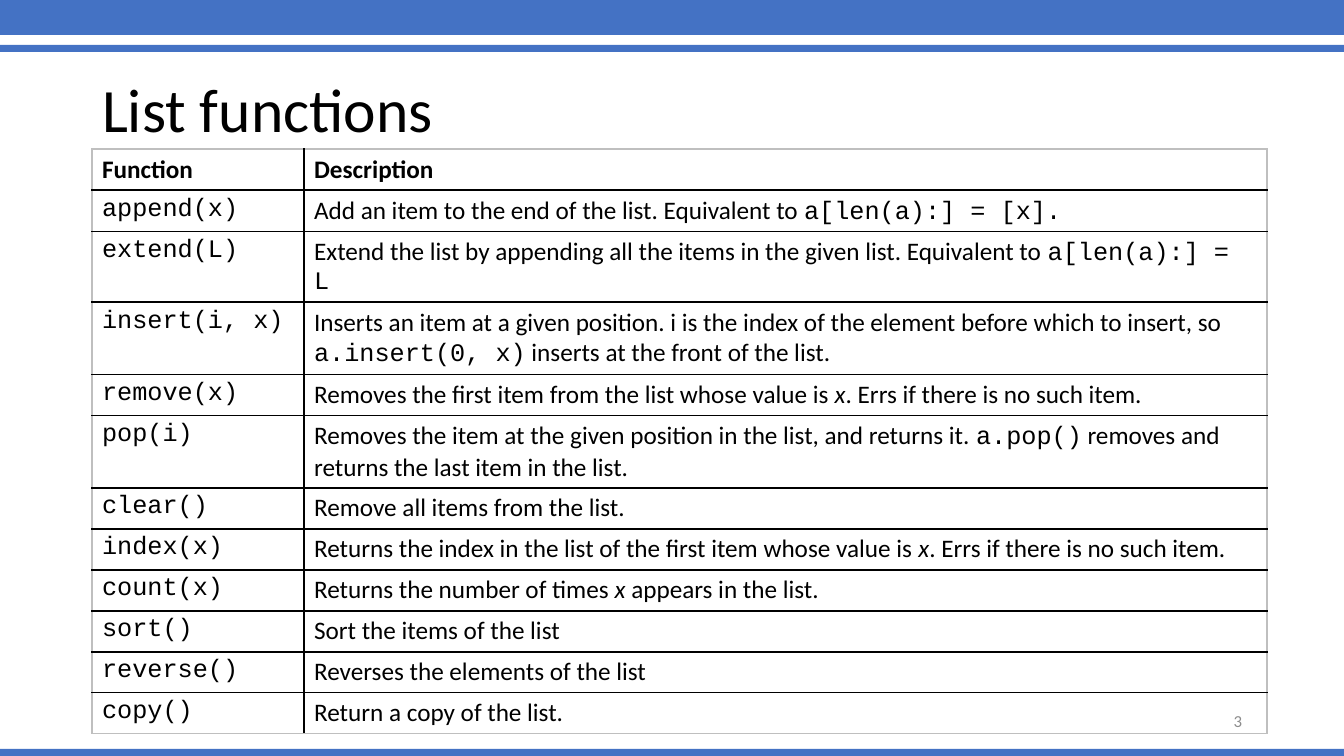
from lxml.etree import SubElement
from pptx import Presentation
from pptx.dml.color import RGBColor
from pptx.enum.shapes import MSO_SHAPE
from pptx.enum.text import MSO_ANCHOR, MSO_AUTO_SIZE, PP_ALIGN
from pptx.oxml.ns import qn
from pptx.util import Emu, Pt

EMU_PER_PX = 914400 / 100.8
SLIDE_WIDTH, SLIDE_HEIGHT = 1344, 756
COLORS = {"bar": "4472C4", "text": "000000", "grid": "000000",
          "frame": "BFBFBF", "number": "8C8C8C"}
BARS = [(-3, 38), (45, 7), (749, 7)]  # top, height
COLUMN_WIDTHS = (212, 963)
ROW_HEIGHT = 41

BODY = {"name": "Calibri", "size": Pt(18), "bold": False}
HEADER = {**BODY, "bold": True}
CODE = {**BODY, "name": "Courier New"}
ITALIC = {**BODY, "italic": True}
TITLE = {**BODY, "size": Pt(44)}
NUMBER = {**BODY, "size": Pt(12)}

FUNCTIONS = [
    ("append(x)", [("Add an item to the end of the list. Equivalent to ", BODY),
                   ("a[len(a):] = [x].", CODE)]),
    ("extend(L)", [("Extend the list by appending all the items in the given list. "
                    "Equivalent to ", BODY),
                   ("a[len(a):] = L", CODE)]),
    ("insert(i, x)", [("Inserts an item at a given position. i is the index of the "
                       "element before which to insert, so ", BODY),
                      ("a.insert(0, x)", CODE),
                      (" inserts at the front of the list.", BODY)]),
    ("remove(x)", [("Removes the first item from the list whose value is ", BODY),
                   ("x", ITALIC), (". Errs if there is no such item.", BODY)]),
    ("pop(i)", [("Removes the item at the given position in the list, "
                 "and returns it. ", BODY),
                ("a.pop()", CODE),
                (" removes and returns the last item in the list.", BODY)]),
    ("clear()", [("Remove all items from the list. ", BODY)]),
    ("index(x)", [("Returns the index in the list of the first item whose value is ",
                   BODY),
                  ("x", ITALIC), (". Errs if there is no such item.", BODY)]),
    ("count(x)", [("Returns the number of times ", BODY),
                  ("x", ITALIC), (" appears in the list.", BODY)]),
    ("sort()", [("Sort the items of the list", BODY)]),
    ("reverse()", [("Reverses the elements of the list", BODY)]),
    ("copy()", [("Return a copy of the list.", BODY)]),
]


def px(length):
    return Emu(round(length * EMU_PER_PX))


def rgb(color):
    return RGBColor.from_string(COLORS[color])


def add_run(paragraph, text, font_format, color="text"):
    run = paragraph.add_run()
    run.text = text
    for attribute, value in font_format.items():
        setattr(run.font, attribute, value)
    run.font.color.rgb = rgb(color)


def add_bar(slide, top, height):
    bar = slide.shapes.add_shape(MSO_SHAPE.RECTANGLE, px(0), px(top),
                                 px(SLIDE_WIDTH), px(height))
    bar.shadow.inherit = False
    bar.fill.solid()
    bar.fill.fore_color.rgb = rgb("bar")
    bar.line.fill.background()


def set_title(slide, text):
    title = slide.shapes.title
    place = {"left": 92, "top": 40, "width": 1158, "height": 146}
    for attribute, length in place.items():
        setattr(title, attribute, px(length))
    frame = title.text_frame
    frame.auto_size = MSO_AUTO_SIZE.NONE
    frame.vertical_anchor = MSO_ANCHOR.MIDDLE
    heading = frame.paragraphs[0]
    heading.alignment = PP_ALIGN.LEFT
    heading.line_spacing = 0.9
    add_run(heading, text, TITLE)


def set_border(cell, side, color):
    line = SubElement(cell._tc.get_or_add_tcPr(), qn(f"a:{side}"), w=str(Pt(1)))
    fill = SubElement(line, qn("a:solidFill"))
    SubElement(fill, qn("a:srgbClr"), val=COLORS[color])


def add_function_table(slide):
    rows = [([("Function", HEADER)], [("Description", HEADER)])]
    rows += [([(name, CODE)], description) for name, description in FUNCTIONS]
    last_row, last_column = len(rows) - 1, len(COLUMN_WIDTHS) - 1
    table = slide.shapes.add_table(
        len(rows), len(COLUMN_WIDTHS), px(92), px(149),
        px(sum(COLUMN_WIDTHS)), px(ROW_HEIGHT * len(rows))).table
    table.first_row = table.horz_banding = False
    for column, width in zip(table.columns, COLUMN_WIDTHS):
        column.width = px(width)
    for r, row in enumerate(rows):
        for c, runs in enumerate(row):
            cell = table.cell(r, c)
            outer_sides = {"lnL": c == 0, "lnR": c == last_column,
                           "lnT": r == 0, "lnB": r == last_row}
            for side, is_outer in outer_sides.items():
                set_border(cell, side, "frame" if is_outer else "grid")
            cell.fill.background()
            for text, font_format in runs:
                add_run(cell.text_frame.paragraphs[0], text, font_format)


def add_slide_number(slide, number):
    box = slide.shapes.add_textbox(px(950), px(701), px(302), px(40))
    box.text_frame.word_wrap = True
    box.text_frame.vertical_anchor = MSO_ANCHOR.MIDDLE
    paragraph = box.text_frame.paragraphs[0]
    paragraph.alignment = PP_ALIGN.RIGHT
    add_run(paragraph, number, NUMBER, "number")


def main():
    deck = Presentation()
    deck.slide_width, deck.slide_height = px(SLIDE_WIDTH), px(SLIDE_HEIGHT)
    slide = deck.slides.add_slide(deck.slide_layouts[5])
    for top, height in BARS:
        add_bar(slide, top, height)
    set_title(slide, "List functions")
    add_function_table(slide)
    add_slide_number(slide, "3")
    deck.save("out.pptx")


if __name__ == "__main__":
    main()
